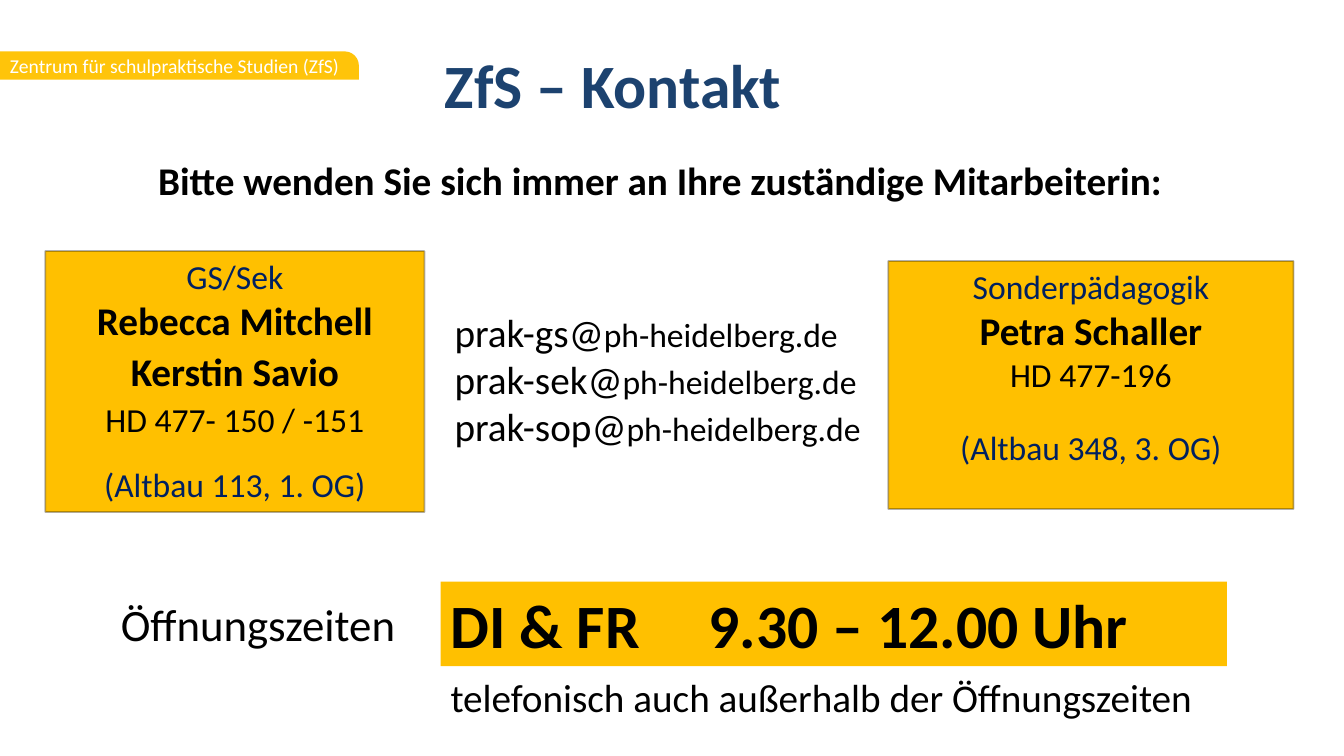
from lxml import etree
from pptx import Presentation
from pptx.dml.color import RGBColor
from pptx.enum.shapes import MSO_SHAPE
from pptx.enum.text import MSO_ANCHOR, PP_ALIGN
from pptx.oxml.ns import qn
from pptx.util import Inches, Pt

LEFT, CENTER, RIGHT = PP_ALIGN.LEFT, PP_ALIGN.CENTER, PP_ALIGN.RIGHT
TOP, MIDDLE = MSO_ANCHOR.TOP, MSO_ANCHOR.MIDDLE
RECTANGLE, TAG = MSO_SHAPE.RECTANGLE, MSO_SHAPE.ROUND_1_RECTANGLE

FONT = "Calibri"
BLACK, WHITE, NAVY, BLUE = "000000", "FFFFFF", "002060", "1C426F"
AMBER, TAG_AMBER = "FFC000", "FFC40A"

# Content
TITLE = "ZfS – Kontakt"
UNIT = "Zentrum für schulpraktische Studien (ZfS)"
REQUEST = "Bitte wenden Sie sich immer an Ihre zuständige Mitarbeiterin:"
HOURS_LABEL = "Öffnungszeiten"
HOURS = "DI & FR\t9.30 – 12.00 Uhr"
PHONE_NOTE = "telefonisch auch außerhalb der Öffnungszeiten"
MAILBOXES = ["prak-gs@", "prak-sek@", "prak-sop@"]
MAIL_DOMAIN = "ph-heidelberg.de"
# Each card: box, area, staff, phone, room, space after names, space after phone
CARDS = [
    ((0.45, 2.49, 3.76, 2.59), "GS/Sek", ["Rebecca Mitchell", "Kerstin Savio"],
     "HD 477- 150 / -151", "(Altbau 113, 1. OG)", 3, 0),
    ((8.81, 2.59, 4.02, 2.46), "Sonderpädagogik", ["Petra Schaller"],
     "HD 477-196", "(Altbau 348, 3. OG)", 0, 6),
]


def color(hex_string):
    return RGBColor.from_string(hex_string)


def format_run(run, size, hex_string=BLACK, bold=False):
    run.font.name, run.font.size, run.font.bold = FONT, Pt(size), bold
    run.font.color.rgb = color(hex_string)


def write(frame, lines, align=LEFT):
    """Each line is (runs, space before, space after); a run is (text, *format)."""
    for index, (runs, before, after) in enumerate(lines):
        paragraph = frame.paragraphs[0] if index == 0 else frame.add_paragraph()
        paragraph.alignment = align
        paragraph.space_before, paragraph.space_after = Pt(before), Pt(after)
        for text, *style in runs:
            run = paragraph.add_run()
            run.text = text
            format_run(run, *style)


def add_text(slide, box, lines, wrap=True):
    shape = slide.shapes.add_textbox(*map(Inches, box))
    shape.text_frame.word_wrap = wrap
    write(shape.text_frame, lines)


def add_panel(slide, kind, box, fill, lines, align, anchor=TOP):
    shape = slide.shapes.add_shape(kind, *map(Inches, box))
    shape.shadow.inherit = False
    shape.fill.solid()
    shape.fill.fore_color.rgb = color(fill)
    shape.line.fill.background()
    shape.text_frame.word_wrap = True
    shape.text_frame.vertical_anchor = anchor
    write(shape.text_frame, lines, align)
    return shape


def outline(shape):
    """Thin black border at 30 % opacity."""
    shape.line.color.rgb = color(BLACK)
    shape.line.width = Pt(1.25)
    for border_color in shape.line._ln.iter(qn("a:srgbClr")):
        etree.SubElement(border_color, qn("a:alpha")).set("val", "30000")


def main():
    presentation = Presentation()
    presentation.slide_width, presentation.slide_height = Inches(13.33), Inches(7.5)
    slide = presentation.slides.add_slide(presentation.slide_layouts[5])

    # Title
    title = slide.shapes.title
    title.left, title.top, title.width, title.height = map(Inches, (4.41, 0.47, 5.35, 0.69))
    frame = title.text_frame
    frame.margin_left = frame.margin_top = frame.margin_right = frame.margin_bottom = 0
    frame.vertical_anchor = TOP
    write(frame, [([(TITLE, 44, BLUE, True)], 0, 0)])

    # Unit tag at the left edge
    tag = add_panel(slide, TAG, (0, 0.51, 3.56, 0.28), TAG_AMBER,
                    [([(UNIT, 14, WHITE)], 0, 0)], RIGHT, MIDDLE)
    tag.adjustments[0] = 0.5
    tag.text_frame.margin_right = Inches(0.15)

    # Contact cards
    for box, area, staff, phone, room, after_name, after_phone in CARDS:
        lines = [([(area, 24, NAVY)], 0, 0)]
        lines += [([(name, 28, BLACK, True)], 0, after_name) for name in staff]
        lines += [([(phone, 24)], 0, after_phone), ([(room, 24, NAVY)], 18, 0)]
        outline(add_panel(slide, RECTANGLE, box, AMBER, lines, CENTER))

    # Request and mail addresses
    add_text(slide, (1.47, 1.5, 11.24, 0.57), [([(REQUEST, 28, BLACK, True)], 0, 0)])
    add_text(slide, (4.41, 3.01, 4.47, 1.82),
             [([(mailbox, 28), (MAIL_DOMAIN, 24)], 0, 0) for mailbox in MAILBOXES])

    # Opening hours
    add_text(slide, (1.1, 5.87, 3.04, 0.64), [([(HOURS_LABEL, 32)], 0, 0)], wrap=False)
    hours = add_panel(slide, RECTANGLE, (4.37, 5.77, 7.8, 0.84), AMBER,
                      [([(HOURS, 44, BLACK, True)], 0, 0)], LEFT)
    properties = hours.text_frame.paragraphs[0]._p.get_or_add_pPr()
    tab = etree.SubElement(etree.SubElement(properties, qn("a:tabLst")), qn("a:tab"))
    tab.set("pos", str(Inches(2.56)))
    tab.set("algn", "l")
    add_text(slide, (4.37, 6.63, 8.45, 0.57), [([(PHONE_NOTE, 28)], 0, 0)])

    presentation.save("out.pptx")


if __name__ == "__main__":
    main()
